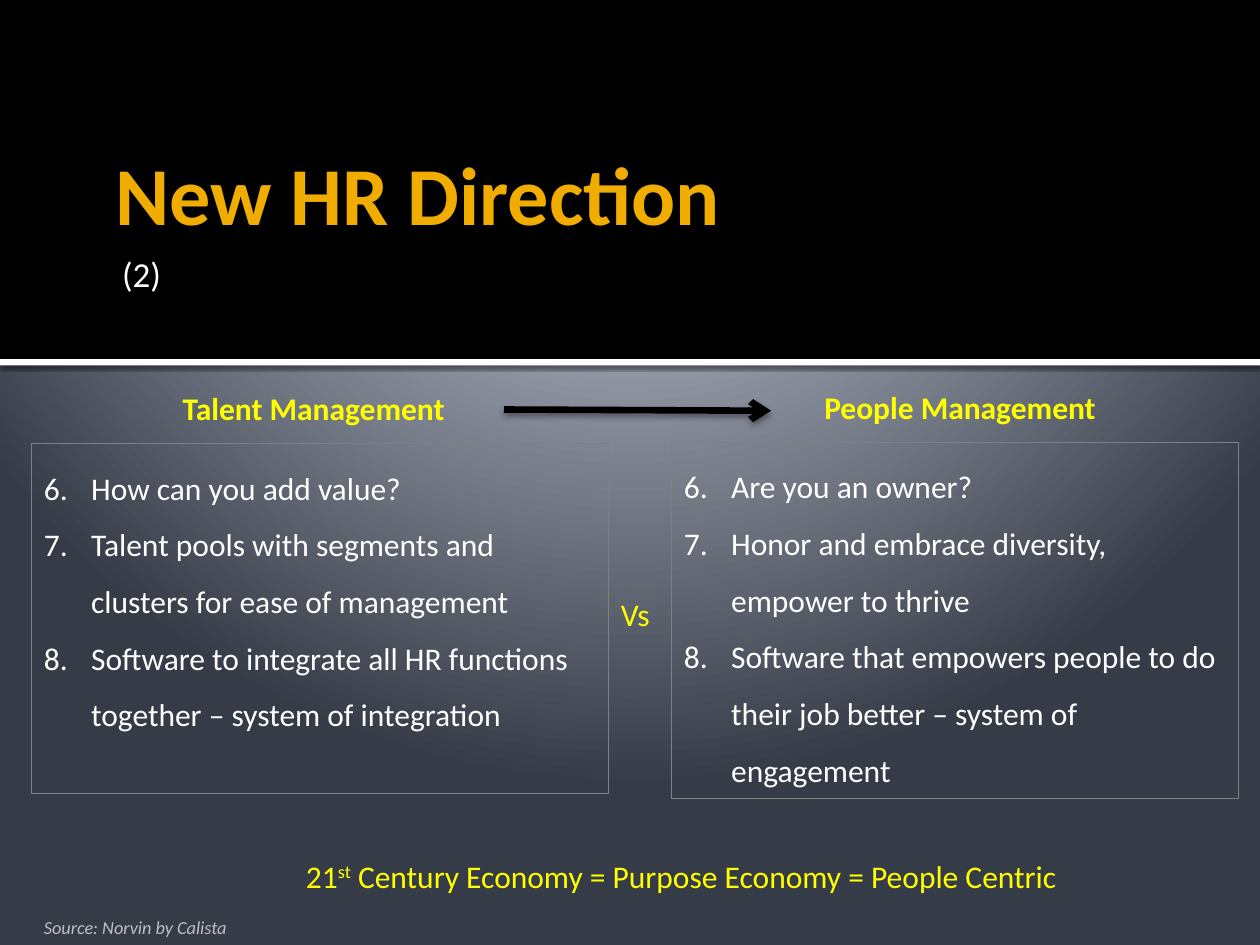
from lxml import etree
from pptx import Presentation
from pptx.dml.color import RGBColor
from pptx.enum.shapes import MSO_CONNECTOR, MSO_SHAPE
from pptx.enum.text import MSO_ANCHOR, PP_ALIGN
from pptx.oxml import parse_xml
from pptx.oxml.ns import nsdecls, qn
from pptx.util import Pt

RECTANGLE = MSO_SHAPE.RECTANGLE
STRAIGHT = MSO_CONNECTOR.STRAIGHT
TOP, BOTTOM = MSO_ANCHOR.TOP, MSO_ANCHOR.BOTTOM
LEFT, CENTER = PP_ALIGN.LEFT, PP_ALIGN.CENTER

FONT = "Calibri"
COLORS = {
    "black": "000000", "white": "FFFFFF", "gold": "F0AD00",
    "yellow": "FFFF00", "border": "808080", "source": "BFBFBF",
}
BACKGROUND_STOPS = [(0, "C1C5D3"), (12, "C1C5D3"), (20, "BFC4D2"), (100, "353B47")]
BANDS = [
    {"box": (0, 0, 720, 205.2), "color": "black"},
    {"box": (0, 205.2, 720, 3.6), "color": "white", "shadow": (60, 2.5, 0.8)},
]
FIRST_NUMBER = 6
PANELS = [
    {"box": (383.76, 252.72, 324, 203.76),
     "questions": ["Are you an owner?",
                   "Honor and embrace diversity, empower to thrive",
                   "Software that empowers people to do their job better – system of engagement"]},
    {"box": (18, 253.44, 329.76, 200.16),
     "questions": ["How can you add value?",
                   "Talent pools with segments and clusters for ease of management",
                   "Software to integrate all HR functions together – system of integration"]},
]
LABELS = [
    {"text": ["New HR Direction"], "box": (59.04, 9.36, 630.72, 128.88), "size": 47,
     "color": "gold", "bold": True, "anchor": BOTTOM, "insets": (7.2, 0, 7.2, 0)},
    {"text": ["(2)"], "box": (58.32, 144, 631.44, 54), "size": 20,
     "color": "white", "insets": (11.52, 0, 3.6, 0)},
    {"text": ["Talent Management"], "box": (44.64, 218.5, 269.28, 28.8),
     "bold": True, "align": CENTER},
    {"text": ["People Management"], "box": (404.64, 218, 288, 28.8),
     "bold": True, "align": CENTER},
    {"text": ["Vs"], "box": (347.76, 336.24, 32.4, 28.8), "wrap": False},
    {"text": ["Source: Norvin by Calista"], "box": (18, 519.84, 150, 20.16),
     "size": 10.5, "color": "source", "italic": True},
    {"text": ["21", "st", " Century Economy = Purpose Economy = People Centric"],
     "box": (167.76, 486, 452.88, 28.8), "superscript": 1, "wrap": False},
]
ARROW = {"ends": (288, 234, 440.64, 234.72), "width": 3.78, "shadow": (38, 3.5, 2)}


def rgb(name):
    return RGBColor.from_string(COLORS[name])


def set_background(slide):
    stops = "".join(f'<a:gs pos="{pos * 1000}"><a:srgbClr val="{color}"/></a:gs>'
                    for pos, color in BACKGROUND_STOPS)
    slide._element.cSld.insert(0, parse_xml(
        f'<p:bg {nsdecls("p", "a")}><p:bgPr><a:gradFill rotWithShape="1">'
        f'<a:gsLst>{stops}</a:gsLst><a:path path="circle">'
        '<a:fillToRect l="10000" t="-25000" r="10000" b="125000"/></a:path>'
        '</a:gradFill><a:effectLst/></p:bgPr></p:bg>'))


def add_shadow(shape, opacity, blur, distance):
    properties = shape._element.spPr
    for effects in properties.findall(qn("a:effectLst")):
        properties.remove(effects)
    properties.append(parse_xml(
        f'<a:effectLst {nsdecls("a")}><a:outerShdw blurRad="{Pt(blur)}" '
        f'dist="{Pt(distance)}" dir="5400000" rotWithShape="0"><a:srgbClr val="000000">'
        f'<a:alpha val="{opacity * 1000}"/></a:srgbClr></a:outerShdw></a:effectLst>'))


def style(paragraph, size, color, bold=False, italic=False):
    font = paragraph.font
    font.name, font.size = FONT, Pt(size)
    font.bold, font.italic = bold, italic
    font.color.rgb = rgb(color)


def add_rectangle(slide, box):
    rectangle = slide.shapes.add_shape(RECTANGLE, *map(Pt, box))
    rectangle.shadow.inherit = False
    return rectangle


def add_band(slide, band):
    strip = add_rectangle(slide, band["box"])
    strip.fill.solid()
    strip.fill.fore_color.rgb = rgb(band["color"])
    strip.line.fill.background()
    if "shadow" in band:
        add_shadow(strip, *band["shadow"])


def add_panel(slide, panel):
    frame = add_rectangle(slide, panel["box"])
    frame.fill.background()
    frame.line.color.rgb = rgb("border")
    frame.line.width = Pt(0.75)
    body = frame.text_frame
    body.word_wrap = True
    body.vertical_anchor = TOP
    for index, question in enumerate(panel["questions"]):
        paragraph = body.add_paragraph() if index else body.paragraphs[0]
        paragraph.text = question
        paragraph.alignment = LEFT
        paragraph.line_spacing = 1.5
        style(paragraph, 18, "white")
        properties = paragraph._p.get_or_add_pPr()
        properties.set("marL", str(Pt(27)))
        properties.set("indent", str(Pt(-27)))
        numbering = parse_xml(f'<a:buAutoNum {nsdecls("a")} type="arabicPeriod" '
                              f'startAt="{FIRST_NUMBER}"/>')
        properties.find(qn("a:defRPr")).addprevious(numbering)


def add_label(slide, label):
    body = slide.shapes.add_textbox(*map(Pt, label["box"])).text_frame
    body.word_wrap = label.get("wrap", True)
    body.vertical_anchor = label.get("anchor", TOP)
    insets = label.get("insets", (7.2, 3.6, 7.2, 3.6))
    body.margin_left, body.margin_top, body.margin_right, body.margin_bottom = map(Pt, insets)
    paragraph = body.paragraphs[0]
    paragraph.alignment = label.get("align", LEFT)
    style(paragraph, label.get("size", 18), label.get("color", "yellow"),
          label.get("bold", False), label.get("italic", False))
    for index, part in enumerate(label["text"]):
        run = paragraph.add_run()
        run.text = part
        if index == label.get("superscript"):
            run._r.get_or_add_rPr().set("baseline", "30000")


def add_arrow(slide, arrow):
    connector = slide.shapes.add_connector(STRAIGHT, *map(Pt, arrow["ends"]))
    connector.line.color.rgb = rgb("black")
    connector.line.width = Pt(arrow["width"])
    etree.SubElement(connector.line._get_or_add_ln(), qn("a:tailEnd"), type="arrow")
    add_shadow(connector, *arrow["shadow"])


def main():
    deck = Presentation()
    deck.slide_width, deck.slide_height = Pt(720), Pt(540)
    slide = deck.slides.add_slide(deck.slide_layouts[6])
    set_background(slide)
    for band in BANDS:
        add_band(slide, band)
    for panel in PANELS:
        add_panel(slide, panel)
    for label in LABELS:
        add_label(slide, label)
    add_arrow(slide, ARROW)
    deck.save("out.pptx")


if __name__ == "__main__":
    main()
